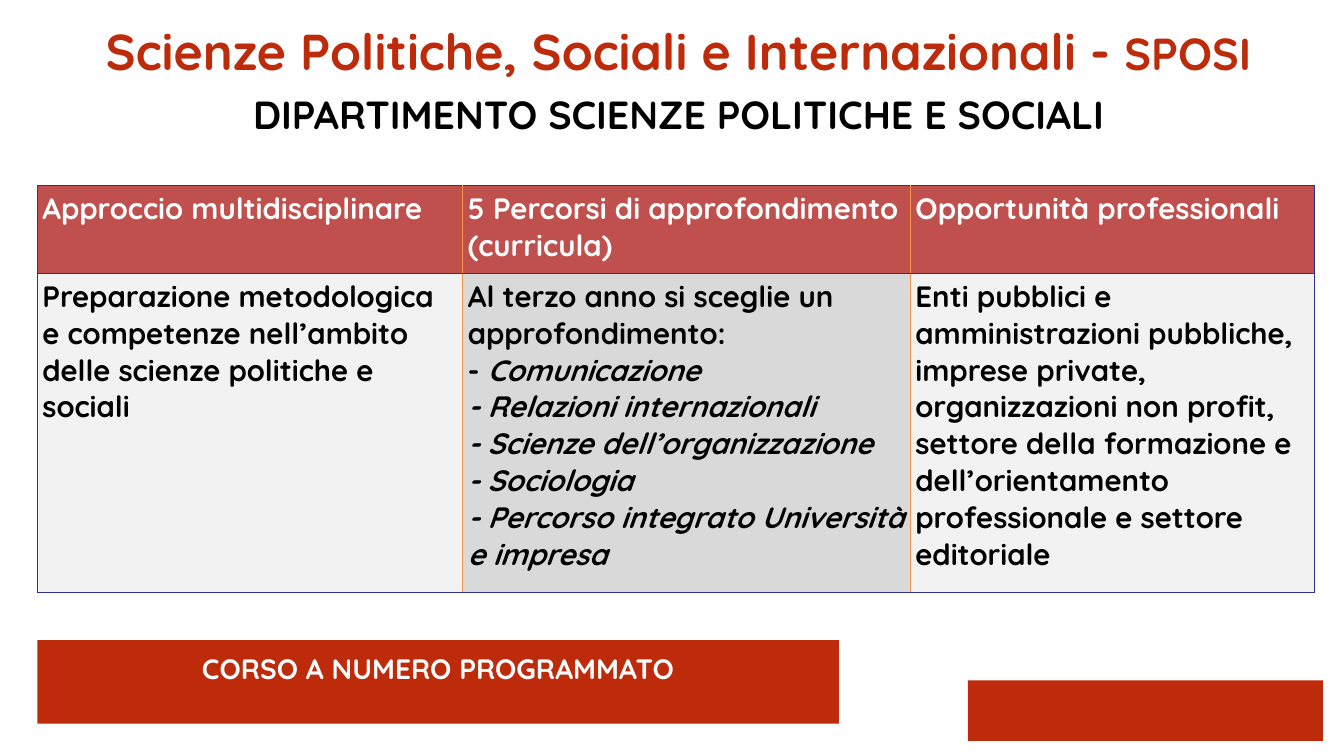
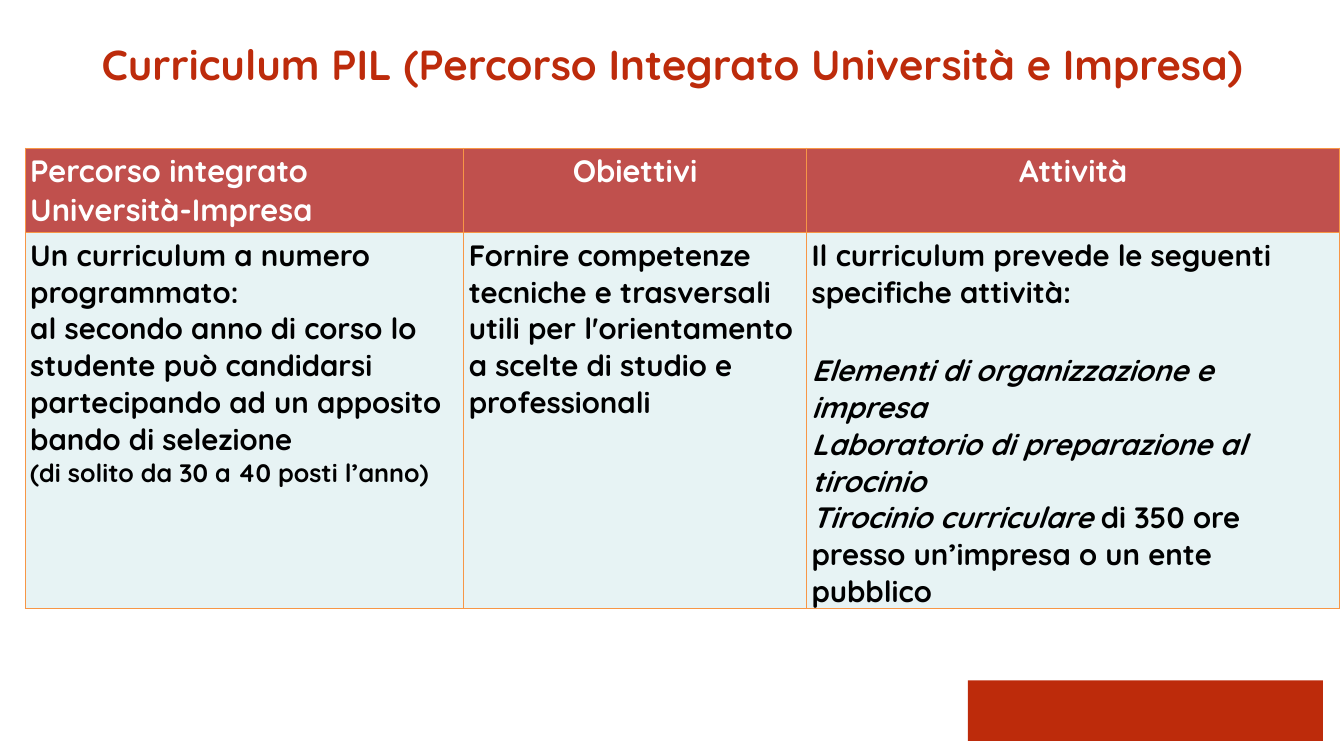
import pptx
import pptx.dml.color
import pptx.enum.shapes
import pptx.enum.text
import pptx.oxml
import pptx.oxml.ns
import pptx.util
from dataclasses import dataclass

Inches = pptx.util.Inches
Pt = pptx.util.Pt
RGBColor = pptx.dml.color.RGBColor
PP_ALIGN = pptx.enum.text.PP_ALIGN

RED = RGBColor(0xBD, 0x2B, 0x0B)
HEADER = RGBColor(0xC0, 0x50, 0x4D)
NAVY = RGBColor(0x2F, 0x2F, 0x98)
ORANGE = RGBColor(0xF7, 0x96, 0x46)
LIGHT_GREY = RGBColor(0xF2, 0xF2, 0xF2)
MID_GREY = RGBColor(0xD9, 0xD9, 0xD9)
PALE_BLUE = RGBColor(0xE7, 0xF3, 0xF4)
BLACK = RGBColor(0, 0, 0)
WHITE = RGBColor(0xFF, 0xFF, 0xFF)
FONT = "Quicksand"
INSET = 0.05


@dataclass
class Run:
    text: str
    size: float = 21
    color: RGBColor = BLACK
    italic: bool = False


@dataclass
class Para:
    runs: list
    align: PP_ALIGN = PP_ALIGN.LEFT
    before: float = 0
    spacing: float = 1.0


def line(text, size=21, color=BLACK, italic=False, **layout):
    return Para([Run(text, size, color, italic)], **layout)


class Deck:
    def __init__(self):
        self.prs = pptx.Presentation()
        self.prs.slide_width = Inches(13.33)
        self.prs.slide_height = Inches(7.5)
        self.s = None

    def slide(self):
        self.s = self.prs.slides.add_slide(self.prs.slide_layouts[6])
        self.band(9.6, 6.75, 3.52, 0.6)

    def set_paras(self, tf, paras):
        tf.word_wrap = True
        for i, para in enumerate(paras):
            p = tf.paragraphs[0] if i == 0 else tf.add_paragraph()
            p.alignment = para.align
            p.line_spacing = para.spacing
            p.space_before = Pt(para.before)
            for run in para.runs:
                r = p.add_run()
                r.text = run.text
                r.font.name = FONT
                r.font.size = Pt(run.size)
                r.font.bold = True
                r.font.italic = run.italic
                r.font.color.rgb = run.color

    def fill_frame(self, tf, paras):
        tf.margin_left = tf.margin_right = Inches(INSET)
        tf.margin_top = tf.margin_bottom = Inches(INSET)
        tf.vertical_anchor = pptx.enum.text.MSO_ANCHOR.TOP
        self.set_paras(tf, paras)

    def text(self, x, y, w, h, paras):
        sp = self.s.shapes.add_textbox(Inches(x), Inches(y), Inches(w), Inches(h))
        self.fill_frame(sp.text_frame, paras)

    def band(self, x, y, w, h, paras=()):
        sp = self.s.shapes.add_shape(
            pptx.enum.shapes.MSO_SHAPE.RECTANGLE,
            Inches(x), Inches(y), Inches(w), Inches(h))
        sp.shadow.inherit = False
        sp.fill.solid()
        sp.fill.fore_color.rgb = RED
        sp.line.fill.background()
        self.fill_frame(sp.text_frame, paras)

    def border(self, cell, side, color):
        ln = pptx.oxml.parse_xml(
            f'<a:ln{side} {pptx.oxml.ns.nsdecls("a")} w="9525">'
            f'<a:solidFill><a:srgbClr val="{color}"/></a:solidFill></a:ln{side}>')
        cell._tc.get_or_add_tcPr().append(ln)

    def table(self, x, y, widths, heights, rows, fills, outer, inner,
              top=INSET, bottom=INSET):
        table = self.s.shapes.add_table(
            len(rows), len(widths), Inches(x), Inches(y),
            Inches(sum(widths)), Inches(sum(heights))).table
        for column, width in zip(table.columns, widths):
            column.width = Inches(width)
        for row, height in zip(table.rows, heights):
            row.height = Inches(height)
        last = len(widths) - 1
        for i, row in enumerate(rows):
            for j, paras in enumerate(row):
                cell = table.cell(i, j)
                cell.margin_left = cell.margin_right = Inches(INSET)
                cell.margin_top = Inches(top)
                cell.margin_bottom = Inches(bottom)
                self.border(cell, "L", outer if j == 0 else inner)
                self.border(cell, "R", outer if j == last else inner)
                self.border(cell, "T", outer)
                self.border(cell, "B", outer)
                cell.fill.solid()
                cell.fill.fore_color.rgb = HEADER if i == 0 else fills[j]
                self.set_paras(cell.text_frame, paras)


def course_slide(deck):
    deck.slide()
    headers = ["Approccio multidisciplinare",
               "5 Percorsi di approfondimento (curricula)",
               "Opportunità professionali"]
    curricula = ["Relazioni internazionali", "Scienze dell’organizzazione",
                 "Sociologia", "Percorso integrato Università e impresa"]
    body = [
        [line("Preparazione metodologica e competenze nell’ambito delle "
              "scienze politiche e sociali")],
        [line("Al terzo anno si sceglie un approfondimento:"),
         Para([Run("- "), Run("Comunicazione", italic=True)]),
         *[line(f"- {name}", italic=True) for name in curricula]],
        [line("Enti pubblici e amministrazioni pubbliche, imprese private, "
              "organizzazioni non profit, settore della formazione e "
              "dell’orientamento professionale e settore editoriale")],
    ]
    deck.table(0.37, 1.84, [4.22, 4.44, 4.01], [0.87, 3.17],
               [[[line(h, color=WHITE)] for h in headers], body],
               [LIGHT_GREY, MID_GREY, LIGHT_GREY], NAVY, ORANGE)
    deck.text(0.13, 0.03, 13.2, 1.87, [
        Para([Run("Scienze Politiche, Sociali e Internazionali - ", 36, RED),
              Run("SPOSI", 32, RED)], PP_ALIGN.CENTER, spacing=1.2),
        line("DIPARTIMENTO SCIENZE POLITICHE E SOCIALI", 28,
             align=PP_ALIGN.CENTER, spacing=1.2)])
    deck.band(0.37, 6.35, 7.95, 0.83, [
        line("CORSO A NUMERO PROGRAMMATO", 20, WHITE,
             align=PP_ALIGN.CENTER, spacing=1.2)])


def curriculum_slide(deck):
    deck.slide()
    deck.text(-0.36, 0.33, 14.06, 0.61, [
        line("Curriculum PIL (Percorso Integrato Università e Impresa)",
             30, RED, align=PP_ALIGN.CENTER)])
    headers = [("Percorso integrato Università-Impresa", PP_ALIGN.LEFT),
               ("Obiettivi", PP_ALIGN.CENTER),
               ("Attività", PP_ALIGN.CENTER)]
    body = [
        [line("Un curriculum a numero programmato:"),
         line("al secondo anno di corso lo studente può candidarsi "
              "partecipando ad un apposito bando di selezione"),
         line("(di solito da 30 a 40 posti l’anno)", 18)],
        [line("Fornire competenze tecniche e trasversali utili per "
              "l'orientamento a scelte di studio e professionali")],
        [line("Il curriculum prevede le seguenti specifiche attività:"),
         line("Elementi di organizzazione e impresa", italic=True, before=30),
         line("Laboratorio di preparazione al tirocinio", italic=True),
         Para([Run("Tirocinio curriculare ", italic=True),
               Run("di 350 ore presso un’impresa o un ente pubblico")])],
    ]
    deck.table(0.25, 1.47, [4.35, 3.4, 5.29], [0.84, 3.73],
               [[[line(h, 22, WHITE, align=a)] for h, a in headers], body],
               [PALE_BLUE] * 3, ORANGE, ORANGE, top=0.04, bottom=0)


def main():
    deck = Deck()
    course_slide(deck)
    curriculum_slide(deck)
    deck.prs.save("out.pptx")


if __name__ == "__main__":
    main()
